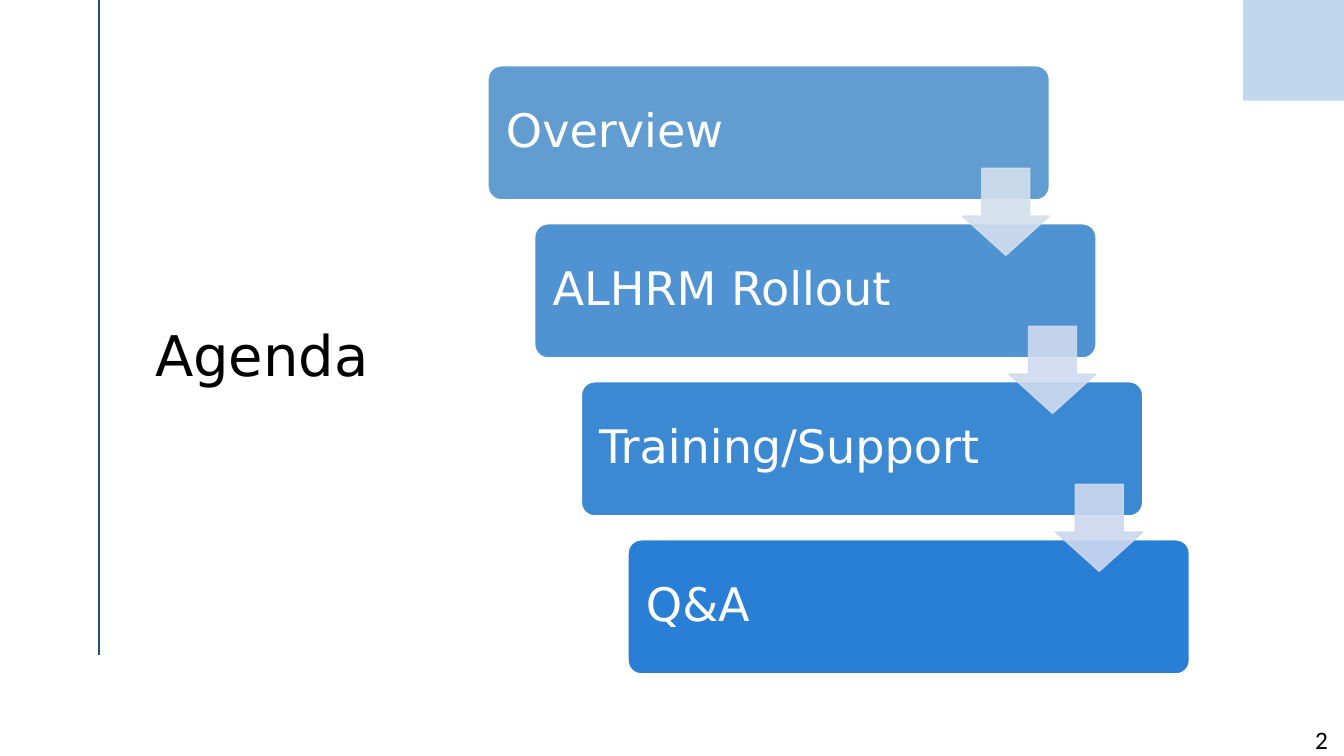
from dataclasses import dataclass

from lxml import etree
from pptx import Presentation
from pptx.dml.color import RGBColor
from pptx.enum import shapes, text
from pptx.oxml import ns
from pptx.util import Pt


@dataclass(frozen=True)
class Theme:
    font: str = "DejaVu Sans"
    number_font: str = "Calibri"
    title_size: float = 40
    step_size: float = 33
    number_size: float = 18
    ink: str = "000000"
    paper: str = "FFFFFF"
    rule: str = "234F77"
    corner: str = "C0D8ED"


THEME = Theme()
AGENDA = [("Overview", "629DD1"), ("ALHRM Rollout", "5093D2"),
          ("Training/Support", "3C89D3"), ("Q&A", "297FD5")]
ARROW_COLORS = ["D3DFEE", "D0DBEF", "CDD8EF"]


def rgb(color):
    return RGBColor.from_string(color)


def set_font(paragraph, name, size, color):
    paragraph.font.name = name
    paragraph.font.size = Pt(size)
    paragraph.font.color.rgb = rgb(color)


def set_alpha(shape, percent):
    """Make the solid fill and outline partly see-through."""
    for color in shape._element.spPr.iter(ns.qn("a:srgbClr")):
        etree.SubElement(color, ns.qn("a:alpha"), val=str(percent * 1000))


def add_block(slide, preset, box, fill, outline=None):
    block = slide.shapes.add_shape(preset, *map(Pt, box))
    block.shadow.inherit = False
    block.fill.solid()
    block.fill.fore_color.rgb = rgb(fill)
    if outline:
        block.line.color.rgb = rgb(outline)
        block.line.width = Pt(1)
    else:
        block.line.fill.background()
    return block


def add_decoration(slide, width):
    rule = slide.shapes.add_connector(
        shapes.MSO_CONNECTOR.STRAIGHT, Pt(70.8), Pt(0), Pt(70.8), Pt(468))
    rule.line.color.rgb = rgb(THEME.rule)
    rule.line.width = Pt(1.5)
    etree.SubElement(rule._element.spPr, ns.qn("a:effectLst"))
    add_block(slide, shapes.MSO_SHAPE.RECTANGLE, (width - 72, 0, 72, 72), THEME.corner)


def add_title(slide, box):
    title = slide.shapes.title
    title.left, title.top, title.width, title.height = map(Pt, box)
    frame = title.text_frame
    frame.text = "Agenda"
    frame.auto_size = text.MSO_AUTO_SIZE.NONE
    frame.vertical_anchor = text.MSO_ANCHOR.MIDDLE
    heading = frame.paragraphs[0]
    heading.alignment = text.PP_ALIGN.LEFT
    heading.line_spacing = 0.9
    set_font(heading, THEME.font, THEME.title_size, THEME.ink)


def add_step(slide, box, label, fill):
    step = add_block(slide, shapes.MSO_SHAPE.ROUNDED_RECTANGLE, box, fill, THEME.paper)
    step.adjustments[0] = 0.1
    frame = step.text_frame
    frame.margin_left = frame.margin_right = Pt(10)
    frame.word_wrap = True
    frame.vertical_anchor = text.MSO_ANCHOR.MIDDLE
    frame.text = label
    line = frame.paragraphs[0]
    line.alignment = text.PP_ALIGN.LEFT
    line.line_spacing = 0.9
    set_font(line, THEME.font, THEME.step_size, THEME.paper)


def add_arrow(slide, box, color):
    arrow = add_block(slide, shapes.MSO_SHAPE.DOWN_ARROW, box, color, color)
    arrow.adjustments[0] = 0.55
    arrow.adjustments[1] = 0.45
    set_alpha(arrow, 90)


def add_staircase(slide, box):
    """Fill the box with steps descending to the right, linked by arrows."""
    left, top, width, height = box
    step_width, step_height, arrow_size = 401, 95.8, 62.2
    gaps = len(AGENDA) - 1
    shift = (width - step_width) / gaps
    drop = (height - step_height) / gaps
    for i, (label, fill) in enumerate(AGENDA):
        add_step(slide, (left + i * shift, top + i * drop, step_width, step_height),
                 label, fill)
    for i, color in enumerate(ARROW_COLORS):
        add_arrow(slide, (left + i * shift + step_width - arrow_size,
                          top + i * drop + 73.2, arrow_size, arrow_size), color)


def add_page_number(slide, box):
    frame = slide.shapes.add_textbox(*map(Pt, box)).text_frame
    frame.word_wrap = True
    frame.margin_right = frame.margin_bottom = 0
    frame.text = "2"
    set_font(frame.paragraphs[0], THEME.number_font, THEME.number_size, THEME.ink)


def main():
    width, height = 960, 540
    deck = Presentation()
    deck.slide_width, deck.slide_height = Pt(width), Pt(height)
    slide = deck.slides.add_slide(deck.slide_layouts[5])
    add_decoration(slide, width)
    add_title(slide, (103.7, 77.8, 283.7, 356.4))
    add_staircase(slide, (348.6, 47, 501, 434.4))
    add_page_number(slide, (932.4, 514, 27.6, 26))
    deck.save("out.pptx")


if __name__ == "__main__":
    main()
